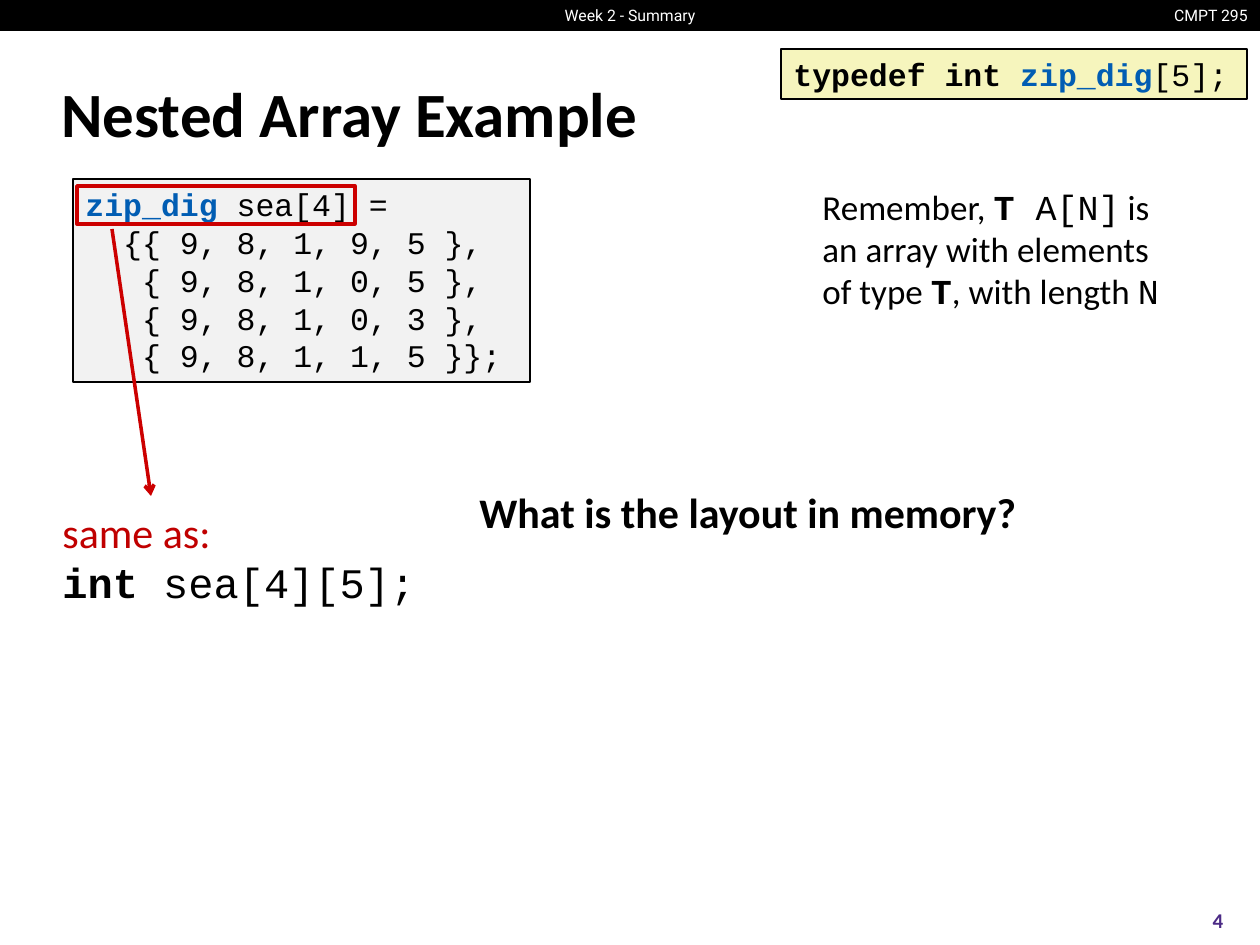
"""Build the Nested Array Example slide."""
from lxml import etree
from pptx import Presentation, util as u
from pptx.dml.color import RGBColor
from pptx.enum import shapes, text
from pptx.oxml.ns import qn

PX = 914400 / 126
COLORS = {
    "black": "000000", "white": "FFFFFF", "type": "015DB3", "code": "F2F2F2",
    "typedef": "F6F5BD", "red": "CC0000", "note": "C00000", "number": "4B2A85",
}
BODY, MONO, HEADER = "Calibri", "Courier New", "Roboto"
LEFT, CENTER, RIGHT = text.PP_ALIGN.LEFT, text.PP_ALIGN.CENTER, text.PP_ALIGN.RIGHT
TOP, MIDDLE = text.MSO_ANCHOR.TOP, text.MSO_ANCHOR.MIDDLE


def run(words, font=BODY, color="black", bold=False):
    return words, font, color, bold


CODE_ROWS = [
    "  {{ 9, 8, 1, 9, 5 },",
    "   { 9, 8, 1, 0, 5 },",
    "   { 9, 8, 1, 0, 3 },",
    "   { 9, 8, 1, 1, 5 }};",
]
DECLARATION = [run("zip_dig", MONO, "type", True), run(" sea[4] =", MONO)]
TYPEDEF = [
    run("typedef int ", MONO, bold=True), run("zip_dig", MONO, "type", True), run("[5];", MONO),
]
REMINDER = [
    run("Remember, "), run("T", MONO, bold=True), run(" A[N]", MONO),
    run(" is an array with elements of type "), run("T", MONO, bold=True),
    run(", with length "), run("N", MONO),
]
SAME_AS = [
    [run("same as:", color="note")],
    [run("int", MONO, bold=True), run(" sea[4][5];", MONO)],
]

RECTANGLES = [
    ((0, 0, 1260, 31), "black", None, 0, 0, []),
    ((73, 179, 457, 203), "code", "black", 1, 18,
     [DECLARATION] + [[run(row, MONO)] for row in CODE_ROWS]),
    ((77, 186, 278, 38), None, "red", 2, 0, []),
    ((781, 49, 466, 50), "typedef", "black", 1, 18, [TYPEDEF]),
]
TEXTS = [
    ((1158, 0, 102, 31), 9, RIGHT, TOP, False, [[run("CMPT 295", HEADER, "white")]]),
    ((541, 0, 178, 31), 9, CENTER, TOP, False, [[run("Week 2 - Summary", HEADER, "white")]]),
    ((49, 60, 1158, 105), 36, LEFT, MIDDLE, True, [[run("Nested Array Example", bold=True)]]),
    ((1176, 895, 84, 50), 12, CENTER, MIDDLE, True, [[run("4", color="number", bold=True)]]),
    ((810, 179, 374, 140), 20, LEFT, TOP, True, [REMINDER]),
    ((467, 480, 567, 63), 24, LEFT, TOP, False,
     [[run("What is the layout in memory?", bold=True)]]),
    ((50, 500, 381, 115), 24, LEFT, TOP, False, SAME_AS),
]
ARROW = (112, 229, 151, 496)


def emu(lengths):
    return [u.Emu(round(length * PX)) for length in lengths]


def rgb(name):
    return RGBColor.from_string(COLORS[name])


def write(shape, size, align, anchor, wrap, lines):
    frame = shape.text_frame
    frame.word_wrap = wrap
    frame.vertical_anchor = anchor
    for index, line in enumerate(lines):
        paragraph = frame.add_paragraph() if index else frame.paragraphs[0]
        paragraph.alignment = align
        for words, font, color, bold in line:
            piece = paragraph.add_run()
            piece.text = words
            piece.font.name = font
            piece.font.size = u.Pt(size)
            piece.font.bold = bold
            piece.font.color.rgb = rgb(color)


def add_rectangle(slide, box, fill, line, width, size, lines):
    shape = slide.shapes.add_shape(shapes.MSO_SHAPE.RECTANGLE, *emu(box))
    shape.shadow.inherit = False
    if fill:
        shape.fill.solid()
        shape.fill.fore_color.rgb = rgb(fill)
    else:
        shape.fill.background()
    if line:
        shape.line.color.rgb = rgb(line)
        shape.line.width = u.Pt(width)
    else:
        shape.line.fill.background()
    if lines:
        write(shape, size, LEFT, TOP, True, lines)


def add_arrow(slide, ends):
    arrow = slide.shapes.add_connector(shapes.MSO_CONNECTOR.STRAIGHT, *emu(ends))
    arrow.line.color.rgb = rgb("red")
    arrow.line.width = u.Pt(2)
    etree.SubElement(arrow.line._get_or_add_ln(), qn("a:tailEnd"), type="arrow")
    etree.SubElement(arrow._element.spPr, qn("a:effectLst"))


def main():
    presentation = Presentation()
    presentation.slide_width, presentation.slide_height = emu((1260, 945))
    slide = presentation.slides.add_slide(presentation.slide_layouts[6])
    for rectangle in RECTANGLES:
        add_rectangle(slide, *rectangle)
    for box, *content in TEXTS:
        write(slide.shapes.add_textbox(*emu(box)), *content)
    add_arrow(slide, ARROW)
    presentation.save("out.pptx")


if __name__ == "__main__":
    main()
